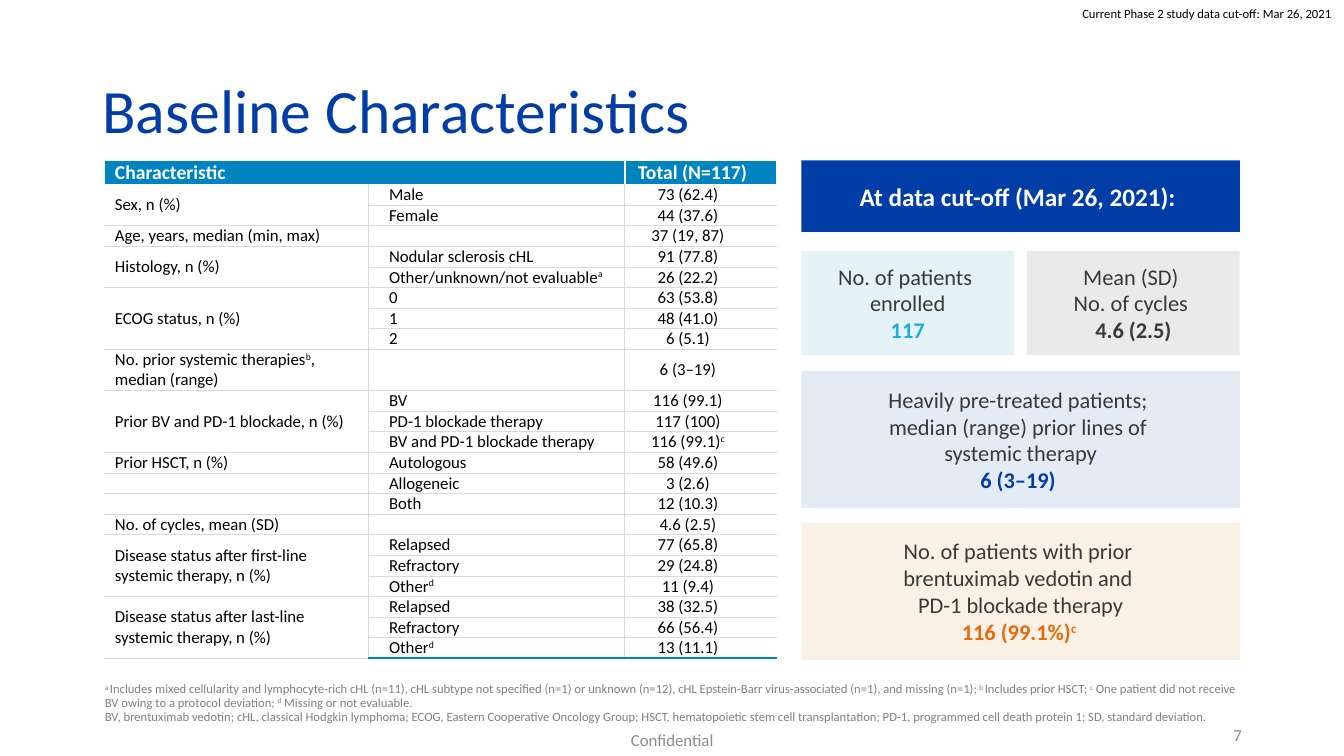
from lxml.etree import SubElement
from pptx import Presentation
from pptx.dml.color import RGBColor
from pptx.enum.shapes import MSO_SHAPE
from pptx.enum.text import MSO_ANCHOR, PP_ALIGN
from pptx.oxml.ns import qn
from pptx.util import Pt

FONT = "Calibri"
BLUE, TEAL, DARK, GRID = "023CA6", "0083C1", "3B3838", "D9D9D9"
ROW_H = 14.74
COL_W = [188.6, 182.9, 108]
HEADER = ["Characteristic", "", "Total (N=117)"]
GROUPS = [
    ("Sex, n (%)", [("Male", "73 (62.4)"), ("Female", "44 (37.6)")]),
    ("Age, years, median (min, max)", [("", "37 (19, 87)")]),
    ("Histology, n (%)", [("Nodular sclerosis cHL", "91 (77.8)"),
                          ("Other/unknown/not evaluable^a^", "26 (22.2)")]),
    ("ECOG status, n (%)", [("0", "63 (53.8)"), ("1", "48 (41.0)"), ("2", "6 (5.1)")]),
    ("No. prior systemic therapies^b^, median (range)", [("", "6 (3–19)")]),
    ("Prior BV and PD-1 blockade, n (%)", [
        ("BV", "116 (99.1)"), ("PD-1 blockade therapy", "117 (100)"),
        ("BV and PD-1 blockade therapy", "116 (99.1)^c^")]),
    ("Prior HSCT, n (%)", [("Autologous", "58 (49.6)")]),
    ("", [("Allogeneic", "3 (2.6)")]),
    ("", [("Both", "12 (10.3)")]),
    ("No. of cycles, mean (SD)", [("", "4.6 (2.5)")]),
    ("Disease status after first-line systemic therapy, n (%)", [
        ("Relapsed", "77 (65.8)"), ("Refractory", "29 (24.8)"), ("Other^d^", "11 (9.4)")]),
    ("Disease status after last-line \nsystemic therapy, n (%)", [
        ("Relapsed", "38 (32.5)"), ("Refractory", "66 (56.4)"), ("Other^d^", "13 (11.1)")]),
]
CARDS = [
    (572.4, 179.3, 152, 74.2, TEAL, "19B0DD", "No. of patients \nenrolled\n117"),
    (572.4, 265, 313.2, 97.9, BLUE, BLUE,
     "Heavily pre-treated patients; \nmedian (range) prior lines of \nsystemic therapy\n6 (3–19) "),
    (733.6, 179.3, 152, 74.2, DARK, DARK, "Mean (SD) \nNo. of cycles \n4.6 (2.5)"),
    (572.4, 373.4, 313.2, 97.9, "E16C0E", "E16C0E",
     "No. of patients with prior \nbrentuximab vedotin and \nPD-1 blockade therapy\n116 (99.1%)^c ^"),
]
FOOTNOTE = (
    "^a ^Includes mixed cellularity and lymphocyte-rich cHL (n=11), cHL subtype not specified "
    "(n=1) or unknown (n=12), cHL Epstein-Barr virus-associated (n=1), and missing (n=1); "
    "^b ^Includes prior HSCT; ^c^ One patient did not receive BV owing to a protocol deviation; "
    "^d^ Missing or not evaluable. \n"
    "BV, brentuximab vedotin; cHL, classical Hodgkin lymphoma; ECOG, Eastern Cooperative "
    "Oncology Group; HSCT, hematopoietic stem cell transplantation; PD-1, programmed cell death "
    "protein 1; SD, standard deviation."
)


def rgb(hex_str):
    """Return the colour for a hex string."""
    return RGBColor.from_string(hex_str)


def write(tf, text, size, color, bold=False, align=PP_ALIGN.LEFT, accent=None,
          anchor=MSO_ANCHOR.MIDDLE, margin=None):
    """Write text with ^superscripts^ and line breaks; accent marks the last line."""
    tf.word_wrap = True
    tf.vertical_anchor = anchor
    if margin is not None:
        tf.margin_left = tf.margin_right = tf.margin_top = tf.margin_bottom = Pt(margin)
    write_paragraph(tf.paragraphs[0], text, size, color, bold, align, accent)


def write_paragraph(p, text, size, color, bold=False, align=PP_ALIGN.LEFT, accent=None):
    """Fill one paragraph with formatted runs."""
    p.alignment = align
    lines = text.split("\n")
    for i, line in enumerate(lines):
        if i:
            p.add_line_break()
        marked = accent and i == len(lines) - 1
        for j, piece in enumerate(line.split("^")):
            if not piece:
                continue
            r = p.add_run()
            r.text = piece
            r.font.name, r.font.size = FONT, Pt(size)
            r.font.bold = bool(bold or marked)
            r.font.color.rgb = rgb(accent if marked else color)
            if j % 2:
                r.font._element.set("baseline", "30000")
    for br in p._p.findall(qn("a:br")):
        SubElement(br, qn("a:rPr"), sz=str(size * 100))
    if not text:
        SubElement(p._p, qn("a:endParaRPr"), sz=str(size * 100))


def add_text(s, x, y, w, h, text, size, color, spacing=None, **style):
    """Add a text box."""
    tf = s.shapes.add_textbox(Pt(x), Pt(y), Pt(w), Pt(h)).text_frame
    write(tf, text, size, color, **style)
    if spacing:
        tf.paragraphs[0].line_spacing = spacing


def add_panel(s, x, y, w, h, fill, text, size, color, opacity=100, **style):
    """Add a borderless rectangle with centred text."""
    sp = s.shapes.add_shape(MSO_SHAPE.RECTANGLE, Pt(x), Pt(y), Pt(w), Pt(h))
    sp.shadow.inherit = False
    sp.line.fill.background()
    sp.fill.solid()
    sp.fill.fore_color.rgb = rgb(fill)
    if opacity < 100:
        clr = sp._element.spPr.find(qn("a:solidFill")).find(qn("a:srgbClr"))
        SubElement(clr, qn("a:alpha"), val=str(opacity * 1000))
    write(sp.text_frame, text, size, color, align=PP_ALIGN.CENTER, **style)
    return sp


def set_border(cell, side, color, width):
    """Draw one side of a cell."""
    ln = SubElement(cell._tc.get_or_add_tcPr(), qn("a:ln" + side), w=str(Pt(width)))
    SubElement(SubElement(ln, qn("a:solidFill")), qn("a:srgbClr"), val=color)


def format_cell(cell, row, col, last_row, text):
    """Set the borders, fill, margins and text of a table cell."""
    head = row == 0
    inner = ("FFFFFF", 1) if head else (GRID, 0.75)
    if col > 0:
        set_border(cell, "L", *inner)
    if col < 2:
        set_border(cell, "R", *inner)
    set_border(cell, "T", *(("FFFFFF", 1) if row < 2 else inner))
    set_border(cell, "B", *((TEAL, 1.5) if row == last_row else inner))
    cell.fill.solid()
    cell.fill.fore_color.rgb = rgb(TEAL if head else "FFFFFF")
    cell.vertical_anchor = MSO_ANCHOR.MIDDLE
    cell.margin_top = cell.margin_bottom = 0
    cell.margin_left = Pt([7.2, 14.4, 0][col])
    cell.margin_right = Pt([0, 0, 11.5 if head else 18][col])
    write_paragraph(cell.text_frame.paragraphs[0], text, 14 if head else 12,
                    "FFFFFF" if head else "000000", bold=head,
                    align=PP_ALIGN.CENTER if col == 2 else PP_ALIGN.LEFT)


def add_characteristics(s, x, y):
    """Add the table of baseline characteristics."""
    rows, spans = [HEADER], []
    for name, items in GROUPS:
        spans.append((len(rows), len(items)))
        rows += [[name if i == 0 else "", *item] for i, item in enumerate(items)]
    heights = [17.4] + [2 * ROW_H if "^b^" in row[0] else ROW_H for row in rows[1:]]
    tbl = s.shapes.add_table(len(rows), 3, Pt(x), Pt(y), Pt(sum(COL_W)), Pt(sum(heights))).table
    tbl.first_row = tbl.horz_banding = False
    for column, width in zip(tbl.columns, COL_W):
        column.width = Pt(width)
    for i, row in enumerate(rows):
        tbl.rows[i].height = Pt(heights[i])
        for j, text in enumerate(row):
            format_cell(tbl.cell(i, j), i, j, len(rows) - 1, text)
    tbl.cell(0, 0).merge(tbl.cell(0, 1))
    for start, count in spans:
        if count > 1:
            tbl.cell(start, 0).merge(tbl.cell(start + count - 1, 0))


def main():
    """Build the slide and save it."""
    prs = Presentation()
    prs.slide_width, prs.slide_height = Pt(960), Pt(540)
    s = prs.slides.add_slide(prs.slide_layouts[6])
    add_text(s, 372.2, 510.5, 216, 28.8, "Confidential", 12, "8C8C8C",
             align=PP_ALIGN.CENTER, anchor=MSO_ANCHOR.BOTTOM)
    add_text(s, 766, 0.7, 196, 18, "Current Phase 2 study data cut-off: Mar 26, 2021", 9,
             "000000", anchor=MSO_ANCHOR.TOP)
    add_text(s, 66.2, 28.8, 828, 104.4, "Baseline Characteristics", 44, BLUE, spacing=0.9)
    add_text(s, 678.2, 510.5, 216, 28.8, "7", 12, "8C8C8C", align=PP_ALIGN.RIGHT)
    add_characteristics(s, 74.9, 114.5)
    add_text(s, 74.9, 477.4, 810.7, 39.6, FOOTNOTE, 9, "808080", spacing=0.9,
             anchor=MSO_ANCHOR.BOTTOM, margin=0)
    add_panel(s, 572.4, 114.5, 313.2, 51.1, "003DA6", "At data cut-off (Mar 26, 2021): ",
              18, "FFFFFF", bold=True, margin=0)
    for x, y, w, h, fill, accent, text in CARDS:
        sp = add_panel(s, x, y, w, h, fill, text, 16, DARK, opacity=10, accent=accent, margin=8.6)
        sp.text_frame.paragraphs[0].space_after = Pt(6)
    prs.save("out.pptx")


if __name__ == "__main__":
    main()
